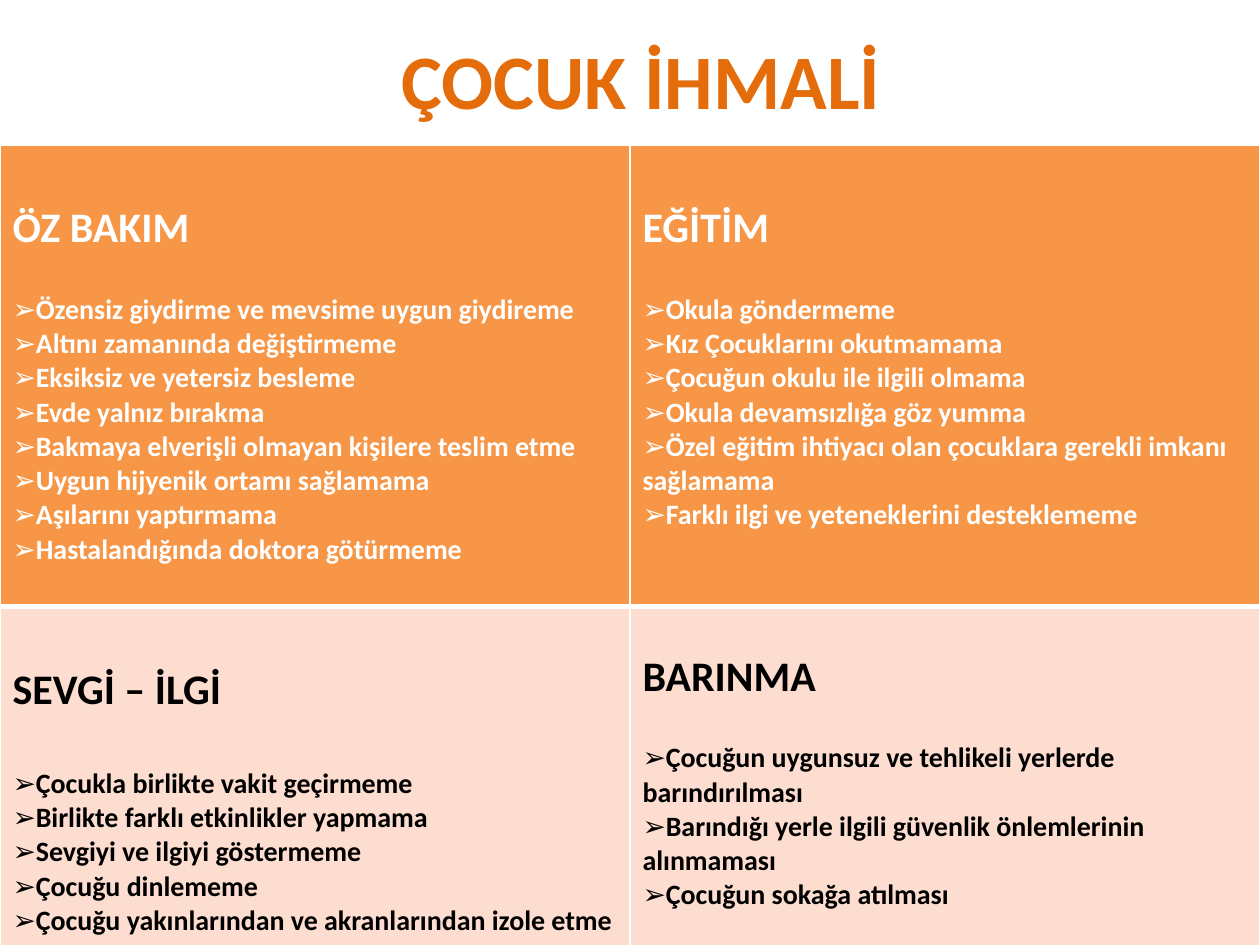
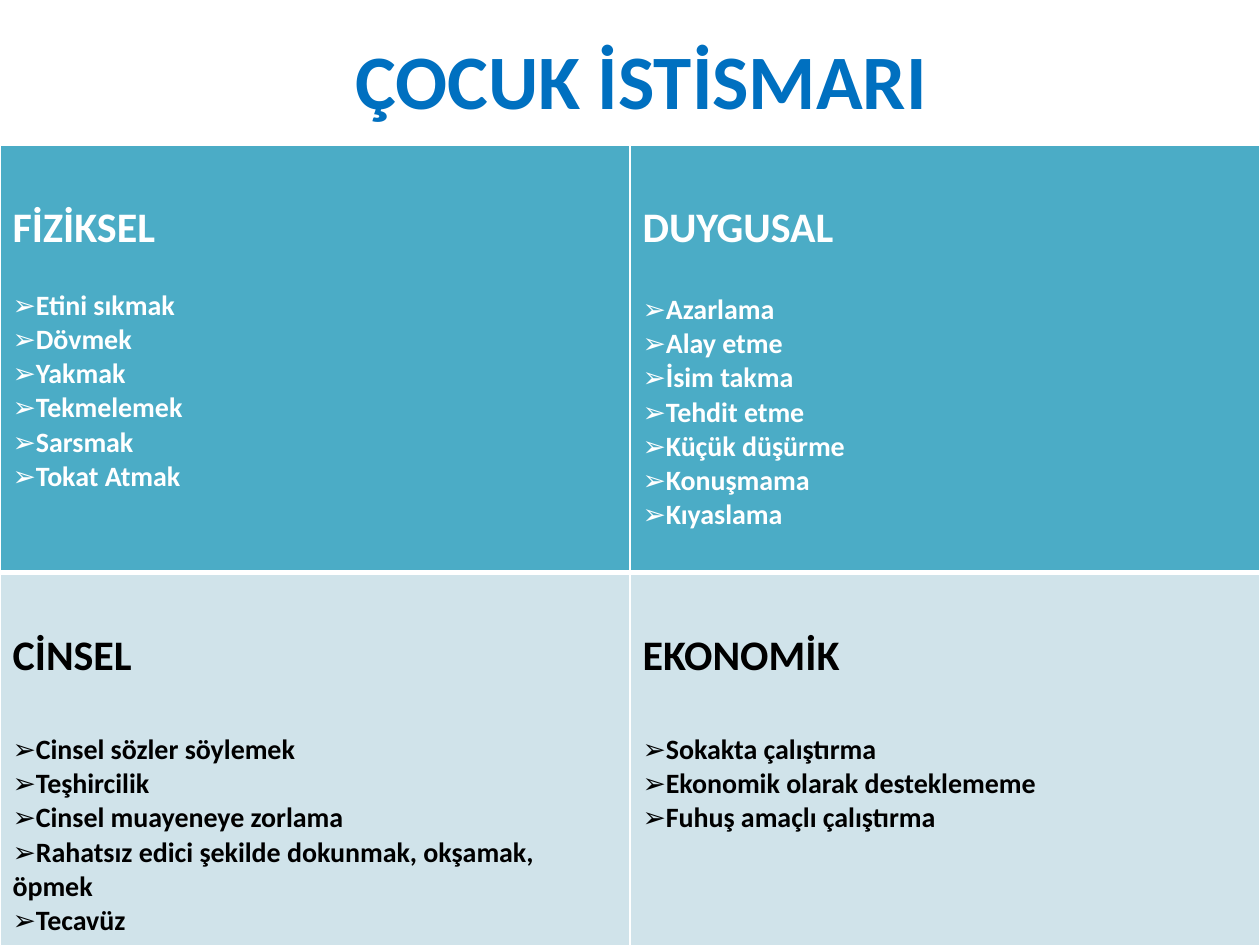
import pptx
import pptx.dml.color
import pptx.enum.text
import pptx.oxml
import pptx.oxml.ns
import pptx.util
from dataclasses import dataclass

RGB = pptx.dml.color.RGBColor
Pt = pptx.util.Pt

WHITE = RGB(0xFF, 0xFF, 0xFF)
BLACK = RGB(0x00, 0x00, 0x00)
DARK_ORANGE = RGB(0xE4, 0x6C, 0x0A)
ORANGE = RGB(0xF7, 0x96, 0x46)
PEACH = RGB(0xFC, 0xDD, 0xCF)
BLUE = RGB(0x00, 0x70, 0xC0)
TEAL = RGB(0x4B, 0xAC, 0xC6)
PALE_TEAL = RGB(0xD0, 0xE3, 0xEA)

FONT = "Calibri"
TITLE_SIZE, HEADING_SIZE, ITEM_SIZE = 44, 24, 16
LINE_HEIGHT = 1.22  # height of a line as a share of its font size
CELL_PADDING = 3.6  # points

# The slide is a grid of 100 columns and 75 rows
SLIDE_W = pptx.util.Inches(10)
SLIDE_H = pptx.util.Inches(7.5)
COLUMN = SLIDE_W / 100
ROW = SLIDE_H / 75

# Left, top, width, height in columns and rows
TITLE_BOX = (5.9, 0, 90, 12.5)
GRID_TOP = 11.55
LOWER_ROWS = 30


@dataclass
class Topic:
    heading: str
    items: list
    lead: int = 24  # gap above the heading, as a font size
    gap: int = 24  # gap below the heading, as a font size


@dataclass
class Theme:
    title: str
    title_color: RGB
    row_fills: tuple
    upper_rows: float
    topics: list


NEGLECT = Theme("ÇOCUK İHMALİ", DARK_ORANGE, (ORANGE, PEACH), 36.6, [
    [Topic("ÖZ BAKIM", [
        "Özensiz giydirme ve mevsime uygun giydireme",
        "Altını zamanında değiştirmeme",
        "Eksiksiz ve yetersiz besleme",
        "Evde yalnız bırakma",
        "Bakmaya elverişli olmayan kişilere teslim etme",
        "Uygun hijyenik ortamı sağlamama",
        "Aşılarını yaptırmama",
        "Hastalandığında doktora götürmeme"], gap=18),
     Topic("EĞİTİM", [
         "Okula göndermeme",
         "Kız Çocuklarını okutmamama",
         "Çocuğun okulu ile ilgili olmama",
         "Okula devamsızlığa göz yumma",
         "Özel eğitim ihtiyacı olan çocuklara gerekli imkanı sağlamama",
         "Farklı ilgi ve yeteneklerini desteklememe"], gap=18)],
    [Topic("SEVGİ – İLGİ", [
        "Çocukla birlikte vakit geçirmeme",
        "Birlikte farklı etkinlikler yapmama",
        "Sevgiyi ve ilgiyi göstermeme",
        "Çocuğu dinlememe",
        "Çocuğu yakınlarından ve akranlarından izole etme"]),
     Topic("BARINMA", [
         "Çocuğun uygunsuz ve tehlikeli yerlerde barındırılması",
         "Barındığı yerle ilgili güvenlik önlemlerinin alınmaması",
         "Çocuğun sokağa atılması"], lead=18, gap=18)],
])

ABUSE = Theme("ÇOCUK İSTİSMARI", BLUE, (TEAL, PALE_TEAL), 33.9, [
    [Topic("FİZİKSEL", ["Etini sıkmak", "Dövmek", "Yakmak", "Tekmelemek",
                        "Sarsmak", "Tokat Atmak"], gap=16),
     Topic("DUYGUSAL", ["Azarlama", "Alay etme", "İsim takma", "Tehdit etme",
                        "Küçük düşürme", "Konuşmama", "Kıyaslama"], gap=18)],
    [Topic("CİNSEL", [
        "Cinsel sözler söylemek",
        "Teşhircilik",
        "Cinsel muayeneye zorlama",
        "Rahatsız edici şekilde dokunmak, okşamak, öpmek",
        "Tecavüz"]),
     Topic("EKONOMİK", [
         "Sokakta çalıştırma",
         "Ekonomik olarak desteklememe",
         "Fuhuş amaçlı çalıştırma"])],
])


def to_lengths(box):
    left, top, width, height = box
    return (round(left * COLUMN), round(top * ROW),
            round(width * COLUMN), round(height * ROW))


def style_paragraph(paragraph, size, color):
    for run in paragraph.runs:
        run.font.name = FONT
        run.font.size = Pt(size)
        run.font.bold = True
        run.font.color.rgb = color


def add_bullet(paragraph):
    properties = paragraph._p.get_or_add_pPr()
    properties.set("marL", "0")
    properties.set("indent", "0")
    for tag, key, value in (("a:buFont", "typeface", FONT),
                            ("a:buChar", "char", "➢")):
        properties.append(
            properties.makeelement(pptx.oxml.ns.qn(tag), {key: value}))


def add_border(cell, side, width):
    line = pptx.oxml.parse_xml(
        f'<a:ln{side} {pptx.oxml.ns.nsdecls("a")} w="{Pt(width)}">'
        f'<a:solidFill><a:srgbClr val="{WHITE}"/></a:solidFill></a:ln{side}>')
    cell._tc.get_or_add_tcPr().append(line)


def add_title(slide, box, text, color):
    frame = slide.shapes.add_textbox(*to_lengths(box)).text_frame
    frame.word_wrap = True
    frame.vertical_anchor = pptx.enum.text.MSO_ANCHOR.MIDDLE
    frame.text = text
    frame.paragraphs[0].alignment = pptx.enum.text.PP_ALIGN.CENTER
    style_paragraph(frame.paragraphs[0], TITLE_SIZE, color)


def fill_topic(cell, topic, color):
    cell.margin_top = Pt(CELL_PADDING + topic.lead * LINE_HEIGHT)
    cell.text_frame.text = "\n".join([topic.heading, *topic.items])
    heading, *items = cell.text_frame.paragraphs
    style_paragraph(heading, HEADING_SIZE, color)
    heading.space_after = Pt(round(topic.gap * LINE_HEIGHT, 1))
    for item in items:
        style_paragraph(item, ITEM_SIZE, color)
        add_bullet(item)


def add_topic_grid(slide, box, theme):
    grid = slide.shapes.add_table(2, 2, *to_lengths(box)).table
    row_heights = (theme.upper_rows, LOWER_ROWS)
    text_colors = (WHITE, BLACK)
    # The rule between the two rows is thicker than the other borders
    border_widths = ({"L": 1, "R": 1, "T": 1, "B": 3},
                     {"L": 1, "R": 1, "T": 3, "B": 1})
    for r, topics in enumerate(theme.topics):
        grid.rows[r].height = round(row_heights[r] * ROW)
        for c, topic in enumerate(topics):
            cell = grid.cell(r, c)
            for side, width in border_widths[r].items():
                add_border(cell, side, width)
            cell.fill.solid()
            cell.fill.fore_color.rgb = theme.row_fills[r]
            fill_topic(cell, topic, text_colors[r])


def add_theme_slide(deck, theme):
    slide = deck.slides.add_slide(deck.slide_layouts[6])
    slide.background.fill.solid()
    slide.background.fill.fore_color.rgb = WHITE
    add_title(slide, TITLE_BOX, theme.title, theme.title_color)
    grid_box = (0, GRID_TOP, 100, theme.upper_rows + LOWER_ROWS)
    add_topic_grid(slide, grid_box, theme)


def main():
    deck = pptx.Presentation()
    deck.slide_width, deck.slide_height = SLIDE_W, SLIDE_H
    for theme in (NEGLECT, ABUSE):
        add_theme_slide(deck, theme)
    deck.save("out.pptx")


if __name__ == "__main__":
    main()
